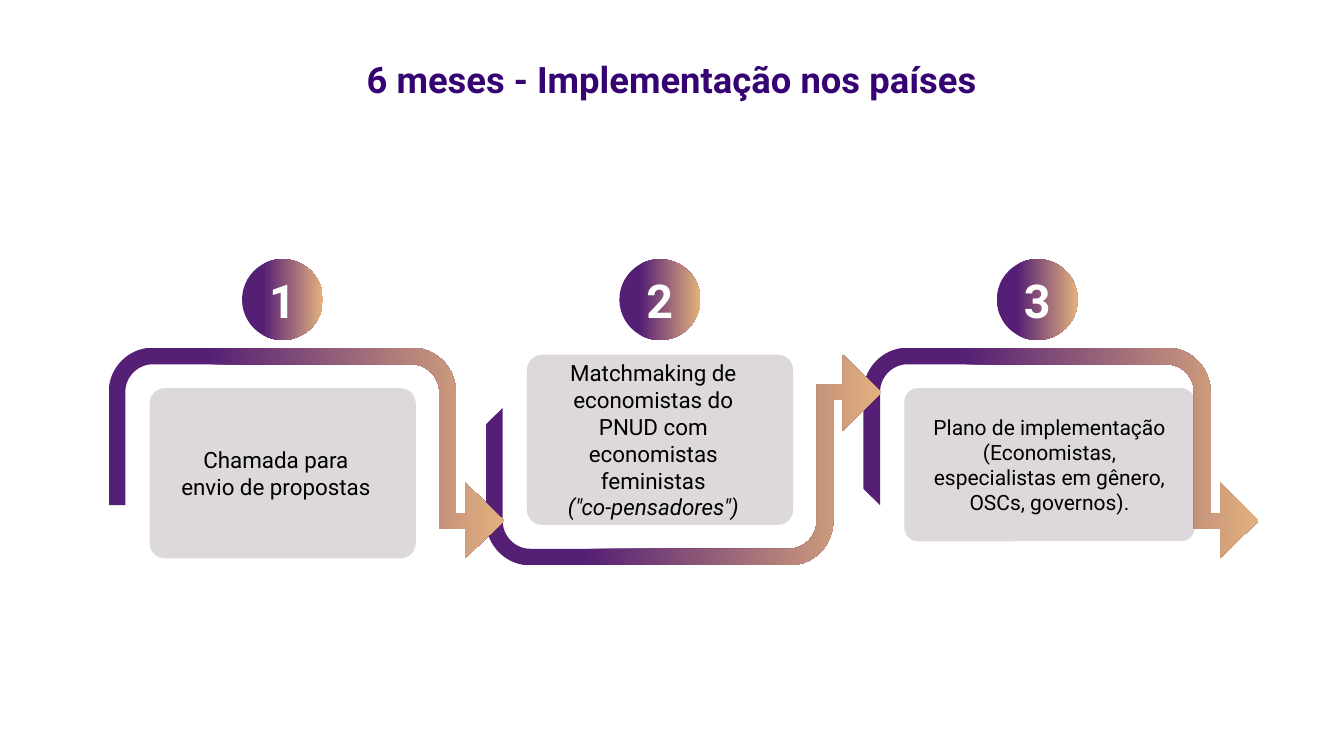
from dataclasses import dataclass
from math import cos, radians, sin

from pptx import Presentation
from pptx import util as u
from pptx.dml.color import RGBColor
from pptx.enum import shapes, text

FONT = "Roboto"
PURPLE, SAND, GREY = "551F75", "E3B17D", "DCD8DC"
TITLE_COLOUR, BLACK, WHITE = "360472", "000000", "FFFFFF"

FIRST_LEFT, PITCH = 2.74, 9.51
ARROW_HEIGHT, BAND, OUTER_RADIUS = 5.31, 0.42, 1.12
LEFT_BEND, RIGHT_BEND = 1.12, 7.63
CIRCLE_OFFSET, CIRCLE_TOP, CIRCLE_SIZE = 3.36, 6.53, 2.04
CARD_OFFSET = 1.03

Point = tuple[float, float]


@dataclass
class Line:
    wording: str
    size: float
    colour: str = BLACK
    bold: bool = False
    italic: bool = False


@dataclass
class Step:
    number: int
    lines: list[Line]
    arrow_top: float
    card_top: float
    card_width: float = 6.71
    card_height: float = 4.29
    right_margin: float = 0.92
    tail: float = 3.56
    flipped: bool = False

    @property
    def left(self) -> float:
        return FIRST_LEFT + (self.number - 1) * PITCH


STEPS = [
    Step(1, [Line("Chamada para envio de propostas", 16)], 8.76, 9.78, tail=3.97),
    Step(2, [Line("Matchmaking de economistas do PNUD com economistas feministas", 16),
             Line('("co-pensadores")', 16, italic=True)],
         8.94, 8.94, flipped=True),
    Step(3, [Line("Plano de implementação", 15),
             Line("(Economistas, especialistas em gênero, OSCs, governos).", 15)],
         8.76, 9.78, card_width=7.32, card_height=3.86, right_margin=0.58),
]


def colour(code: str) -> RGBColor:
    return RGBColor.from_string(code)


def write(shape, lines: list[Line], margins: tuple[float, float, float, float]) -> None:
    """Fill a shape with centred lines; margins are left, top, right, bottom."""
    frame = shape.text_frame
    frame.word_wrap = True
    frame.vertical_anchor = text.MSO_ANCHOR.MIDDLE
    (frame.margin_left, frame.margin_top,
     frame.margin_right, frame.margin_bottom) = map(u.Cm, margins)
    for index, line in enumerate(lines):
        para = frame.add_paragraph() if index else frame.paragraphs[0]
        para.alignment = text.PP_ALIGN.CENTER
        span = para.add_run()
        span.text = line.wording
        span.font.name = FONT
        span.font.size = u.Pt(line.size)
        span.font.bold = line.bold
        span.font.italic = line.italic
        span.font.color.rgb = colour(line.colour)


def remove_outline(shape) -> None:
    shape.shadow.inherit = False
    shape.line.fill.background()


def fill_gradient(shape) -> None:
    shape.fill.gradient()
    shape.fill.gradient_angle = 0
    for stop, code, position in zip(shape.fill.gradient_stops, (PURPLE, SAND), (0.25, 1)):
        stop.color.rgb = colour(code)
        stop.position = position
    remove_outline(shape)


def bend(centre_x: float, radius: float, start: int, end: int) -> list[Point]:
    """Points of a quarter circle, with angles running clockwise on the page."""
    angles = [radians(start + (end - start) * part / 18) for part in range(19)]
    return [(centre_x + radius * cos(angle), OUTER_RADIUS + radius * sin(angle))
            for angle in angles]


def arrow_outline(tail: float) -> list[Point]:
    inner_radius = OUTER_RADIUS - BAND
    head = [(8.75, 4.17), (8.99, 4.17), (8.99, 3.4), (9.96, 4.36),
            (8.99, ARROW_HEIGHT), (8.99, 4.57), (8.33, 4.57)]
    return [(0, tail),
            *bend(LEFT_BEND, OUTER_RADIUS, 180, 270),
            *bend(RIGHT_BEND, OUTER_RADIUS, 270, 360),
            *head,
            *bend(RIGHT_BEND, inner_radius, 360, 270),
            *bend(LEFT_BEND, inner_radius, 270, 180),
            (BAND, 3.97)]


def draw_card(page, step: Step) -> None:
    card = page.shapes.add_shape(
        shapes.MSO_SHAPE.ROUNDED_RECTANGLE, u.Cm(step.left + CARD_OFFSET),
        u.Cm(step.card_top), u.Cm(step.card_width), u.Cm(step.card_height))
    card.adjustments[0] = 0.09
    card.fill.solid()
    card.fill.fore_color.rgb = colour(GREY)
    remove_outline(card)
    write(card, step.lines, (0.58, 0.23, step.right_margin, 0.23))


def draw_arrow(page, step: Step) -> None:
    points = [(u.Cm(step.left + x),
               u.Cm(step.arrow_top + (ARROW_HEIGHT - y if step.flipped else y)))
              for x, y in arrow_outline(step.tail)]
    builder = page.shapes.build_freeform(*points[0])
    builder.add_line_segments(points[1:], close=True)
    fill_gradient(builder.convert_to_shape())


def draw_circle(page, step: Step) -> None:
    circle = page.shapes.add_shape(
        shapes.MSO_SHAPE.OVAL, u.Cm(step.left + CIRCLE_OFFSET), u.Cm(CIRCLE_TOP),
        u.Cm(CIRCLE_SIZE), u.Cm(CIRCLE_SIZE))
    fill_gradient(circle)
    write(circle, [Line(str(step.number), 33.3, WHITE, bold=True)], (0, 0, 0, 0))


def draw_title(page) -> None:
    box = page.shapes.add_textbox(u.Cm(4.83), u.Cm(1.24), u.Cm(24.21), u.Cm(1.35))
    title = Line("6 meses - Implementação nos países", 26, TITLE_COLOUR, bold=True)
    write(box, [title], (0.25, 0.13, 0.25, 0.13))
    box.text_frame.vertical_anchor = text.MSO_ANCHOR.TOP
    para = box.text_frame.paragraphs[0]
    para.line_spacing = 1.07
    para.space_after = u.Pt(8)


def main() -> None:
    deck = Presentation()
    deck.slide_width, deck.slide_height = u.Cm(33.87), u.Cm(19.05)
    page = deck.slides.add_slide(deck.slide_layouts[6])
    for step in reversed(STEPS):
        draw_card(page, step)
        draw_arrow(page, step)
        draw_circle(page, step)
    draw_title(page)
    deck.save("out.pptx")


if __name__ == "__main__":
    main()
